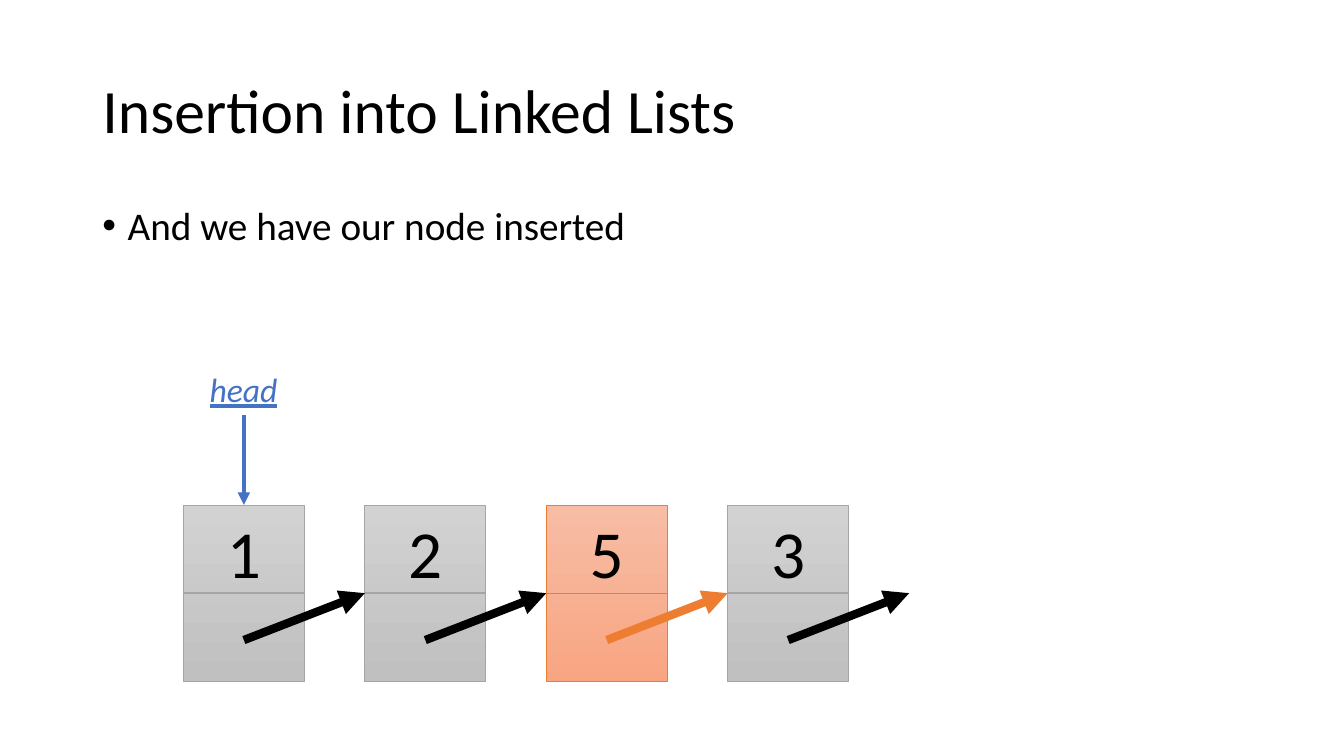
"""Build a slide showing a linked list after a node has been inserted."""
import pptx
import pptx.dml.color
import pptx.enum.shapes
import pptx.enum.text
import pptx.oxml
import pptx.oxml.ns
import pptx.util

Pt = pptx.util.Pt
FONT = "Calibri"
BLACK, BLUE = "000000", "4472C4"
TITLE = "Insertion into Linked Lists"
BULLET = "And we have our node inserted"
HEAD = "head"
GREY_NODE = {"top": "D2D2D2", "bottom": "C0C0C0", "edge": "A5A5A5", "divider": 1, "arrow": BLACK}
NEW_NODE = {"top": "F7BDA5", "bottom": "F8A582", "edge": "ED7D31", "divider": 0.5, "arrow": "ED7D31"}
NODES = [("1", GREY_NODE), ("2", GREY_NODE), ("5", NEW_NODE), ("3", GREY_NODE)]

NODE_LEFT, NODE_TOP, NODE_WIDTH, NODE_HEIGHT = 131, 360.7, 86.4, 126
NODE_STEP = NODE_WIDTH * 1.5
DIVIDER_Y = NODE_TOP + NODE_HEIGHT / 2
POINTER_Y = 457.2


def rgb(value):
    return pptx.dml.color.RGBColor.from_string(value)


def place(shape, left, top, width, height):
    shape.left, shape.top, shape.width, shape.height = Pt(left), Pt(top), Pt(width), Pt(height)


def write(shape, text, size, color, align=pptx.enum.text.PP_ALIGN.LEFT):
    shape.text_frame.text = text
    paragraph = shape.text_frame.paragraphs[0]
    paragraph.alignment = align
    font = paragraph.runs[0].font
    font.name, font.size, font.color.rgb = FONT, Pt(size), rgb(color)
    return paragraph


def add_line(shapes, start, end, color, weight, arrow=False):
    line = shapes.add_connector(
        pptx.enum.shapes.MSO_CONNECTOR.STRAIGHT, *(Pt(value) for value in start + end))
    line.line.color.rgb = rgb(color)
    line.line.width = Pt(weight)
    if arrow:
        tail = pptx.oxml.parse_xml(f'<a:tailEnd {pptx.oxml.ns.nsdecls("a")} type="triangle"/>')
        line.line._get_or_add_ln().append(tail)
    line._element.spPr.append(pptx.oxml.parse_xml(f'<a:effectLst {pptx.oxml.ns.nsdecls("a")}/>'))


def add_node(shapes, left, value, style):
    node = shapes.add_group_shape().shapes
    box = node.add_shape(pptx.enum.shapes.MSO_SHAPE.RECTANGLE,
                         Pt(left), Pt(NODE_TOP), Pt(NODE_WIDTH), Pt(NODE_HEIGHT))
    box.shadow.inherit = False
    box.fill.gradient()
    box.fill.gradient_angle = 270
    for stop, color in zip(box.fill.gradient_stops, (style["top"], style["bottom"])):
        stop.color.rgb = rgb(color)
    box.line.color.rgb = rgb(style["edge"])
    box.line.width = Pt(0.5)
    box.text_frame.vertical_anchor = pptx.enum.text.MSO_ANCHOR.TOP
    box.text_frame.margin_top = Pt(4.4)
    write(box, value, 48, BLACK, pptx.enum.text.PP_ALIGN.CENTER)
    add_line(node, (left, DIVIDER_Y), (left + NODE_WIDTH, DIVIDER_Y),
             style["edge"], style["divider"])


def main():
    deck = pptx.Presentation()
    deck.slide_width, deck.slide_height = Pt(960), Pt(540)
    slide = deck.slides.add_slide(deck.slide_layouts[1])
    shapes = slide.shapes

    title, body = slide.placeholders
    place(title, 66, 28.75, 828, 104.4)
    title.text_frame.vertical_anchor = pptx.enum.text.MSO_ANCHOR.MIDDLE
    write(title, TITLE, 44, BLACK).line_spacing = 0.9

    place(body, 66, 143.75, 828, 342.6)
    message = write(body, BULLET, 28, BLACK)
    message.line_spacing, message.space_before = 0.9, Pt(10)
    indent = message._p.get_or_add_pPr()
    indent.set("marL", str(Pt(18)))
    indent.set("indent", str(-Pt(18)))
    for holder in (title, body):
        holder.text_frame.auto_size = pptx.enum.text.MSO_AUTO_SIZE.NONE

    lefts = [NODE_LEFT + index * NODE_STEP for index in range(len(NODES))]
    for left, (value, style) in zip(lefts, NODES):
        add_node(shapes, left, value, style)
    for left, (value, style) in zip(lefts, NODES):
        add_line(shapes, (left + NODE_WIDTH / 2, POINTER_Y), (left + NODE_STEP, DIVIDER_Y),
                 style["arrow"], 6, arrow=True)

    head = shapes.add_textbox(Pt(142.6), Pt(260), Pt(64), Pt(36))
    head.text_frame.word_wrap = False
    head_font = write(head, HEAD, 24, BLUE).runs[0].font
    head_font.italic = head_font.underline = True
    head_x = NODE_LEFT + NODE_WIDTH / 2
    add_line(shapes, (head_x, 296.6), (head_x, NODE_TOP), BLUE, 3, arrow=True)

    deck.save("out.pptx")


if __name__ == "__main__":
    main()
